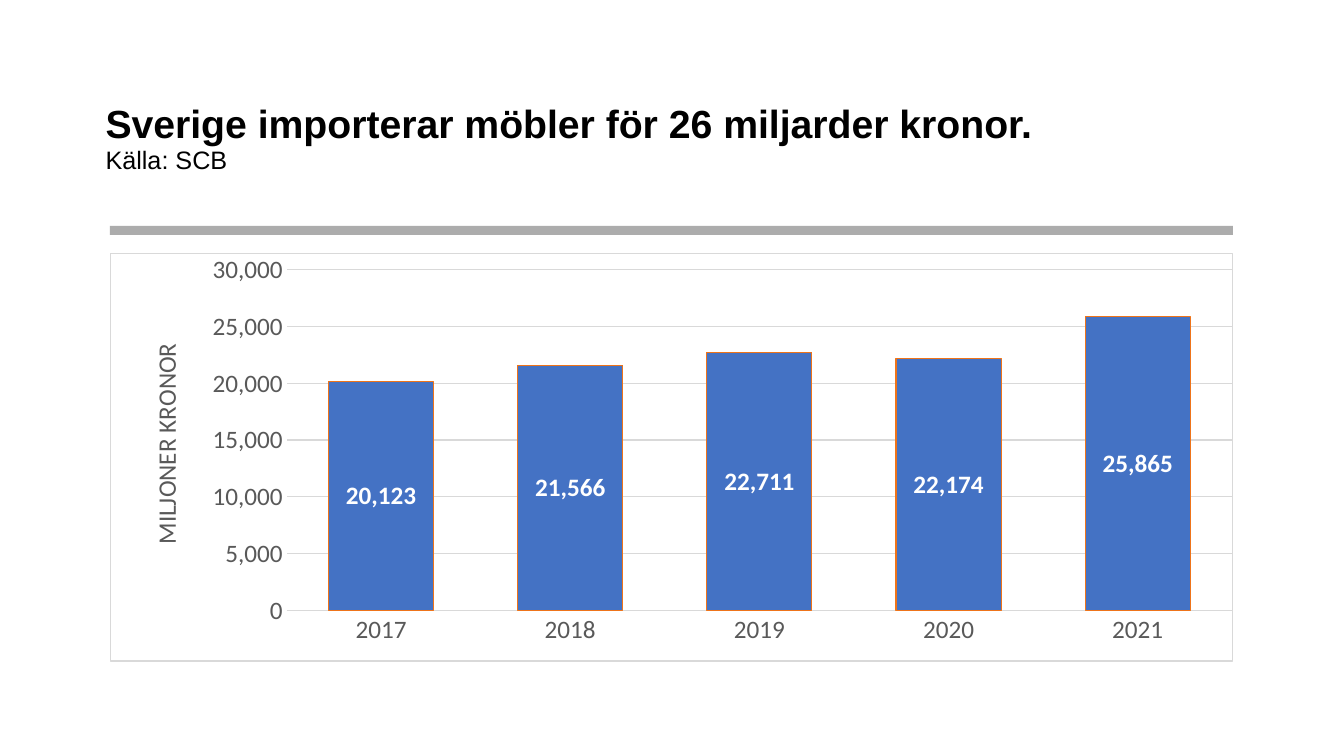
from lxml.etree import SubElement
from pptx import Presentation
from pptx.chart.data import CategoryChartData as Data
from pptx.dml.color import RGBColor
from pptx.enum.chart import XL_CHART_TYPE as Kind
from pptx.enum.chart import XL_LABEL_POSITION as Place
from pptx.enum.chart import XL_TICK_MARK as Tick
from pptx.enum.shapes import MSO_SHAPE as Shape
from pptx.enum.text import MSO_ANCHOR as Anchor
from pptx.oxml import parse_xml
from pptx.oxml.ns import nsdecls, qn
from pptx.util import Cm, Pt

BLACK, WHITE, GREY, DARK, PALE = "000000", "FFFFFF", "808080", "595959", "D9D9D9"
BLUE, ORANGE = "4472C4", "EE741A"
LEFT, WIDTH = 2.77, 28.3
IMPORTS = {"2017": 20123, "2018": 21566, "2019": 22711, "2020": 22174, "2021": 25865}


def color(code):
    return RGBColor.from_string(code)


def assign(item, **values):
    for name, value in values.items():
        setattr(item, name, value)


def style(font, code, size, name="Calibri", bold=False):
    assign(font, name=name, size=Pt(size), bold=bold)
    font.color.rgb = color(code)


def stroke(line, code):
    line.color.rgb = color(code)
    line.width = Pt(0.75)


def paint(fill, code):
    fill.solid()
    fill.fore_color.rgb = color(code)


def arrange(node, index, modes, **spots):
    """Give a chart part a manual layout, in shares of the chart's size."""
    for old in node.findall(qn("c:layout")):
        node.remove(old)
    layout = parse_xml(f"<c:layout {nsdecls('c')}><c:manualLayout/></c:layout>")
    for tag, value in {**modes, **spots}.items():
        SubElement(layout[0], qn(f"c:{tag}"), val=str(value))
    node.insert(index, layout)


def frame(chart):
    """Fill the chart area white and draw its border."""
    chart._chartSpace.chart.addnext(parse_xml(
        f"<c:spPr {nsdecls('c', 'a')}>"
        f'<a:solidFill><a:srgbClr val="{WHITE}"/></a:solidFill>'
        f'<a:ln w="{Pt(0.75)}"><a:solidFill><a:srgbClr val="{PALE}"/></a:solidFill></a:ln>'
        "</c:spPr>"))


def add_title(slide, head, source):
    box = slide.shapes.add_textbox(Cm(2.41), Cm(1.68), Cm(29.03), Cm(3.68))
    text = box.text_frame
    assign(text, word_wrap=True, vertical_anchor=Anchor.MIDDLE)
    para = text.paragraphs[0]
    para.line_spacing = 0.9
    first = para.add_run()
    first.text = head
    style(first.font, BLACK, 28, "Arial", True)
    para.add_line_break()
    second = para.add_run()
    second.text = source
    style(second.font, BLACK, 18, "Arial")


def add_rule(slide):
    bar = slide.shapes.add_shape(Shape.RECTANGLE, Cm(LEFT), Cm(5.69), Cm(WIDTH), Cm(0.23))
    bar.shadow.inherit = False
    paint(bar.fill, GREY)
    bar.line.fill.background()
    shade = bar.fill._xPr.find(".//" + qn("a:srgbClr"))
    SubElement(shade, qn("a:alpha"), val="65000")


def set_axes(chart):
    years, money = chart.category_axis, chart.value_axis
    for axis in (years, money):
        assign(axis, major_tick_mark=Tick.NONE, minor_tick_mark=Tick.NONE)
        style(axis.tick_labels.font, DARK, 18)
    stroke(years.format.line, PALE)
    assign(money, minimum_scale=0, maximum_scale=30000, major_unit=5000,
           has_major_gridlines=True)
    assign(money.tick_labels, number_format="#,##0", number_format_is_linked=False)
    money.format.line.fill.background()
    stroke(money.major_gridlines.format.line, PALE)
    para = money.axis_title.text_frame.paragraphs[0]
    run = para.add_run()
    run.text = "MILJONER KRONOR"
    style(run.font, DARK, 18)
    arrange(money.axis_title._element, 1, {"xMode": "edge", "yMode": "edge"}, x=0.03, y=0.21)


def add_columns(slide, values):
    data = Data(number_format="#,##0")
    data.categories = list(values)
    data.add_series("Series 1", list(values.values()))
    chart = slide.shapes.add_chart(Kind.COLUMN_CLUSTERED, Cm(LEFT), Cm(6.38),
                                   Cm(WIDTH), Cm(10.29), data).chart
    assign(chart, has_legend=False, has_title=False)
    style(chart.font, BLACK, 9)
    frame(chart)
    set_axes(chart)
    plot = chart.plots[0]
    assign(plot, gap_width=80, overlap=25, vary_by_categories=False)
    series = plot.series[0]
    paint(series.format.fill, BLUE)
    stroke(series.format.line, ORANGE)
    labels = series.data_labels
    assign(labels, show_value=True, position=Place.CENTER,
           number_format="#,##0", number_format_is_linked=False)
    style(labels.font, WHITE, 18, bold=True)
    arrange(chart._chartSpace.chart.plotArea, 0,
            {"layoutTarget": "inner", "xMode": "edge", "yMode": "edge"},
            x=0.157, y=0.039, w=0.843, h=0.837)


def main():
    deck = Presentation()
    assign(deck, slide_width=Cm(33.87), slide_height=Cm(19.05))
    slide = deck.slides.add_slide(deck.slide_layouts[6])
    add_title(slide, "Sverige importerar möbler för 26 miljarder kronor.", "Källa: SCB")
    add_rule(slide)
    add_columns(slide, IMPORTS)
    deck.save("out.pptx")


if __name__ == "__main__":
    main()
